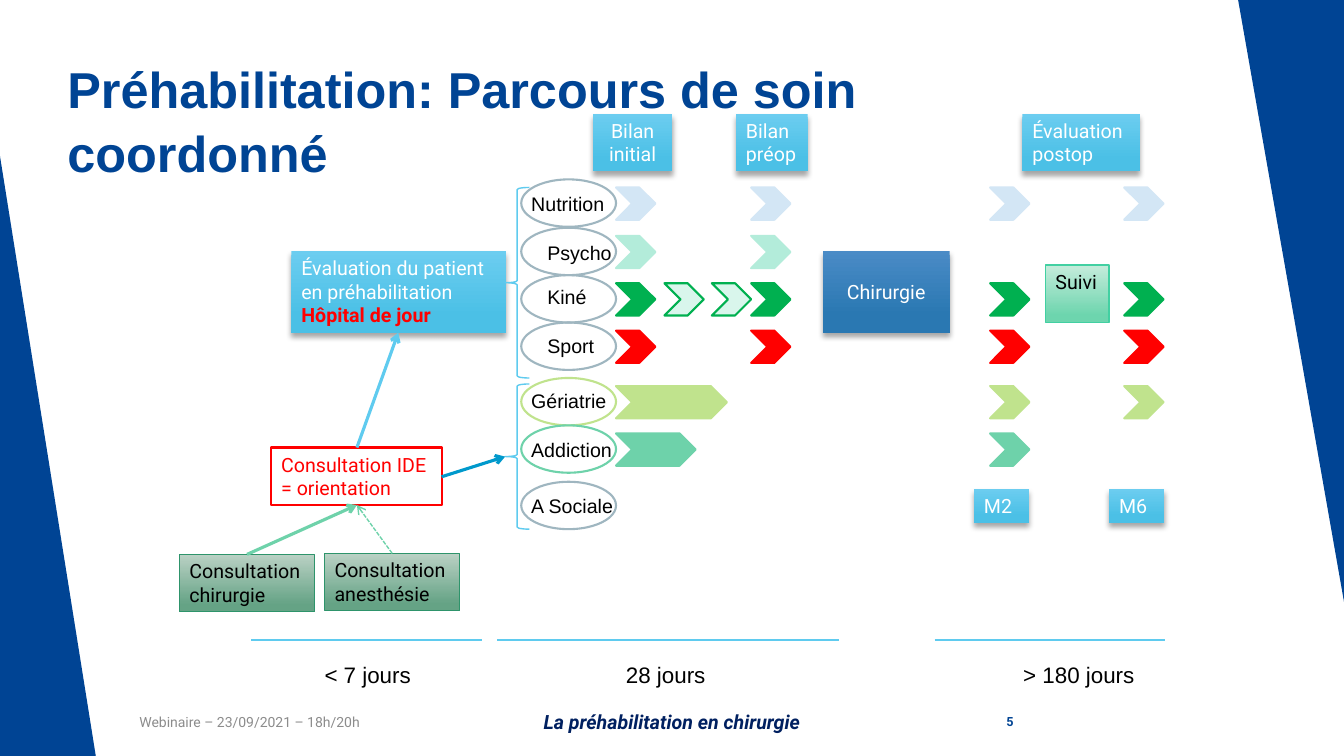
from pptx import Presentation
from pptx.dml.color import RGBColor
from pptx.enum.dml import MSO_LINE
from pptx.enum.shapes import MSO_CONNECTOR, MSO_SHAPE as SHAPE
from pptx.enum.text import MSO_ANCHOR as ANCHOR, PP_ALIGN as ALIGN
from pptx.oxml import parse_xml
from pptx.oxml.ns import nsdecls, qn
from pptx.util import Inches, Pt

WHITE = RGBColor(0xFF, 0xFF, 0xFF)
BLACK = RGBColor(0x00, 0x00, 0x00)
NAVY = RGBColor(0x00, 0x44, 0x94)
DARK_BLUE = RGBColor(0x00, 0x20, 0x60)
GREY = RGBColor(0x8C, 0x8C, 0x8C)
RED = RGBColor(0xFF, 0x00, 0x00)
SKY = RGBColor(0x5F, 0xCB, 0xEF)
CYAN = RGBColor(0x00, 0x99, 0xCC)
STEEL = RGBColor(0x9F, 0xB6, 0xC0)
PALE_BLUE = RGBColor(0xD3, 0xE6, 0xF5)
PALE_MINT = RGBColor(0xB3, 0xEC, 0xDA)
LIGHT_MINT = RGBColor(0xD9, 0xF6, 0xEC)
GREEN = RGBColor(0x00, 0xB0, 0x50)
LIME = RGBColor(0xC0, 0xE3, 0x8D)
MINT = RGBColor(0x6E, 0xD2, 0xAA)
FOREST = RGBColor(0x2E, 0x94, 0x6B)
SUIVI_LINE = RGBColor(0x42, 0xD0, 0xA2)
# Gradients: top colour, bottom colour, position of the bottom colour
BLUE_FADE = (RGBColor(0x6C, 0xCD, 0xF0), RGBColor(0x4B, 0xC0, 0xE6), 0.78)
SURGERY_FADE = (RGBColor(0x4A, 0x8B, 0xC6), RGBColor(0x2A, 0x78, 0xB2), 0.78)
FOREST_FADE = (RGBColor(0xBA, 0xD1, 0xC4), RGBColor(0x65, 0xA3, 0x85), 0.88)
MINT_FADE = (RGBColor(0xC5, 0xEC, 0xDB), RGBColor(0x6D, 0xD5, 0xAE), 0.88)

presentation = Presentation()
presentation.slide_width = Inches(13.33)
presentation.slide_height = Inches(7.5)
slide = presentation.slides.add_slide(presentation.slide_layouts[6])


def add_text(text, at=None, shape=None, size=14, font="Roboto", color=BLACK, bold=False,
             italic=False, align=ALIGN.LEFT, anchor=ANCHOR.TOP, spacing=None):
    """Write text into a shape, or into a new text box; return its paragraphs."""
    shape = shape or slide.shapes.add_textbox(*map(Inches, at))
    frame = shape.text_frame
    frame.word_wrap = True
    frame.vertical_anchor = anchor
    frame.text = text
    for paragraph in frame.paragraphs:
        paragraph.alignment = align
        paragraph.line_spacing = spacing
        for run in paragraph.runs:
            run.font.name, run.font.size = font, Pt(size)
            run.font.bold, run.font.italic = bold, italic
            run.font.color.rgb = color
    return frame.paragraphs


def add_shape(kind, at, fill=None, line=None, width=1.5, shadow=False):
    """Add a preset shape; fill is a colour, a gradient tuple or None."""
    shape = slide.shapes.add_shape(kind, *map(Inches, at))
    if fill is None:
        shape.fill.background()
    elif isinstance(fill, RGBColor):
        shape.fill.solid()
        shape.fill.fore_color.rgb = fill
    else:
        shape.fill.gradient()
        shape.fill.gradient_angle = 270
        for stop, color, position in zip(shape.fill.gradient_stops, fill[:2], (0, fill[2])):
            stop.color.rgb = color
            stop.position = position
    if line is None:
        shape.line.fill.background()
    else:
        shape.line.color.rgb = line
        shape.line.width = Pt(width)
    shape.shadow.inherit = False
    if shadow:
        shape.element.spPr.find(qn("a:effectLst")).append(parse_xml(
            f'<a:outerShdw {nsdecls("a")} blurRad="{Pt(4)}" dist="{Pt(3)}" dir="5400000" '
            'rotWithShape="0"><a:srgbClr val="000000"><a:alpha val="35000"/></a:srgbClr>'
            '</a:outerShdw>'))
    return shape


# Side triangles, title and footer
add_shape(SHAPE.RIGHT_TRIANGLE, (0, 1.55, 0.95, 5.95), NAVY)
add_shape(SHAPE.RIGHT_TRIANGLE, (12.28, 0, 1.05, 5.97), NAVY).rotation = 180
add_text("Préhabilitation: Parcours de soin coordonné", at=(0.57, 0.5, 9.4, 1.44),
         size=36, font="Arial", color=NAVY, bold=True, spacing=1.05)
add_text("Webinaire – 23/09/2021 – 18h/20h", at=(1.03, 6.96, 2.89, 0.4), size=10,
         color=GREY, align=ALIGN.CENTER, anchor=ANCHOR.MIDDLE)
add_text("La préhabilitation en chirurgie", at=(4.2, 6.96, 4.93, 0.4), color=DARK_BLUE,
         bold=True, italic=True, align=ALIGN.CENTER, anchor=ANCHOR.MIDDLE)
add_text("5", at=(9.4, 6.96, 0.75, 0.4), size=9, color=NAVY, bold=True,
         align=ALIGN.RIGHT, anchor=ANCHOR.MIDDLE)

# Boxes without shadow: text, place, fill, line, line width, text colour
for text, at, fill, line, width, color in (
        ("Consultation chirurgie", (1.78, 5.5, 1.34, 0.57), FOREST_FADE, FOREST, 1, BLACK),
        ("Consultation anesthésie", (3.22, 5.49, 1.34, 0.57), FOREST_FADE, FOREST, 1, BLACK),
        ("Consultation IDE = orientation", (2.69, 4.44, 1.69, 0.57), WHITE, RED, 1.5, RED),
        ("Suivi", (10.37, 2.63, 0.63, 0.57), MINT_FADE, SUIVI_LINE, 1, BLACK)):
    add_text(text, shape=add_shape(SHAPE.RECTANGLE, at, fill, line, width), color=color)

# Blue boxes with shadow
for text, at, align in (
        ("Bilan initial", (5.88, 1.13, 0.79, 0.57), ALIGN.CENTER),
        ("Bilan préop", (7.3, 1.13, 0.71, 0.57), ALIGN.LEFT),
        ("Évaluation postop", (10.14, 1.13, 1.17, 0.57), ALIGN.LEFT),
        ("M2", (9.66, 4.85, 0.55, 0.34), ALIGN.LEFT),
        ("M6", (11, 4.85, 0.55, 0.34), ALIGN.LEFT)):
    box = add_shape(SHAPE.RECTANGLE, at, BLUE_FADE, shadow=True)
    add_text(text, shape=box, color=WHITE, align=align)

evaluation = add_shape(SHAPE.RECTANGLE, (2.89, 2.49, 2.13, 0.81), BLUE_FADE, shadow=True)
paragraphs = add_text("Évaluation du patient en préhabilitation\nHôpital de jour",
                      shape=evaluation, color=WHITE)
day_hospital = paragraphs[1].runs[0].font
day_hospital.bold = True
day_hospital.color.rgb = RED

surgery = add_shape(SHAPE.RECTANGLE, (8.16, 2.49, 1.26, 0.81), SURGERY_FADE, shadow=True)
add_text("Chirurgie", shape=surgery, color=WHITE, align=ALIGN.CENTER, anchor=ANCHOR.MIDDLE)

# Care rows: label, label left and top, ellipse top, ellipse line, chevron colour, chevrons
INITIAL, PREOP, MONTH_2, MONTH_6 = 6.11, 7.45, 9.82, 11.15
CHEVRON = 0.39
everywhere = [(left, CHEVRON) for left in (INITIAL, PREOP, MONTH_2, MONTH_6)]
for label, left, label_top, top, outline, color, chevrons in (
        ("Nutrition", 5.17, 1.86, 1.78, STEEL, PALE_BLUE, everywhere),
        ("Psycho", 5.33, 2.34, 2.26, STEEL, PALE_MINT, everywhere[:2]),
        ("Kiné", 5.33, 2.78, 2.73, STEEL, GREEN, everywhere),
        ("Sport", 5.33, 3.26, 3.2, STEEL, RED, everywhere),
        ("Gériatrie", 5.17, 3.81, 3.75, LIME, LIME, [(INITIAL, 1.1)] + everywhere[2:]),
        ("Addiction", 5.17, 4.3, 4.22, MINT, MINT, [(INITIAL, 0.79), (MONTH_2, CHEVRON)]),
        ("A Sociale", 5.17, 4.85, 4.78, STEEL, None, [])):
    add_text(label, at=(left, label_top, 1.1, 0.34), font="Arial")
    for chevron_left, width in chevrons:
        add_shape(SHAPE.CHEVRON, (chevron_left, top + 0.08, width, 0.32), color, color)
    add_shape(SHAPE.OVAL, (5.17, top, 0.94, 0.47), line=outline)

# Light physiotherapy sessions between the two assessments
for left in (6.59, 7.06):
    add_shape(SHAPE.CHEVRON, (left, 2.81, CHEVRON, 0.32), LIGHT_MINT, GREEN)

# Braces
for top, height in ((1.86, 1.89), (3.81, 1.44)):
    add_shape(SHAPE.LEFT_BRACE, (5.01, top, 0.24, height), line=SKY, width=1)

# Arrows and time lines: start, end, colour, width, arrowhead, dash
for start, end, color, width, arrow, dash in (
        ((3.54, 4.44), (3.95, 3.3), SKY, 2.25, True, None),
        ((2.45, 5.5), (3.54, 5.01), MINT, 2.25, True, None),
        ((3.89, 5.49), (3.54, 5.01), MINT, 1, True, MSO_LINE.SQUARE_DOT),
        ((4.38, 4.73), (5.01, 4.53), CYAN, 2.25, True, None),
        ((2.49, 6.35), (4.78, 6.35), SKY, 1, False, None),
        ((4.93, 6.35), (8.32, 6.35), SKY, 1, False, None),
        ((9.27, 6.35), (11.55, 6.35), SKY, 1, False, None)):
    connector = slide.shapes.add_connector(MSO_CONNECTOR.STRAIGHT, *map(Inches, start + end))
    connector.line.color.rgb = color
    connector.line.width = Pt(width)
    if dash:
        connector.line.dash_style = dash
    properties = connector.element.spPr
    if arrow:
        properties.find(qn("a:ln")).append(
            parse_xml(f'<a:tailEnd {nsdecls("a")} type="arrow"/>'))
    properties.append(parse_xml(f'<a:effectLst {nsdecls("a")}/>'))

# Durations
for text, left in (("< 7 jours", 3.12), ("28 jours", 6.11), ("> 180 jours", 10.05)):
    add_text(text, at=(left, 6.51, 1.31, 0.37), size=16, font="Arial")

presentation.save("out.pptx")
